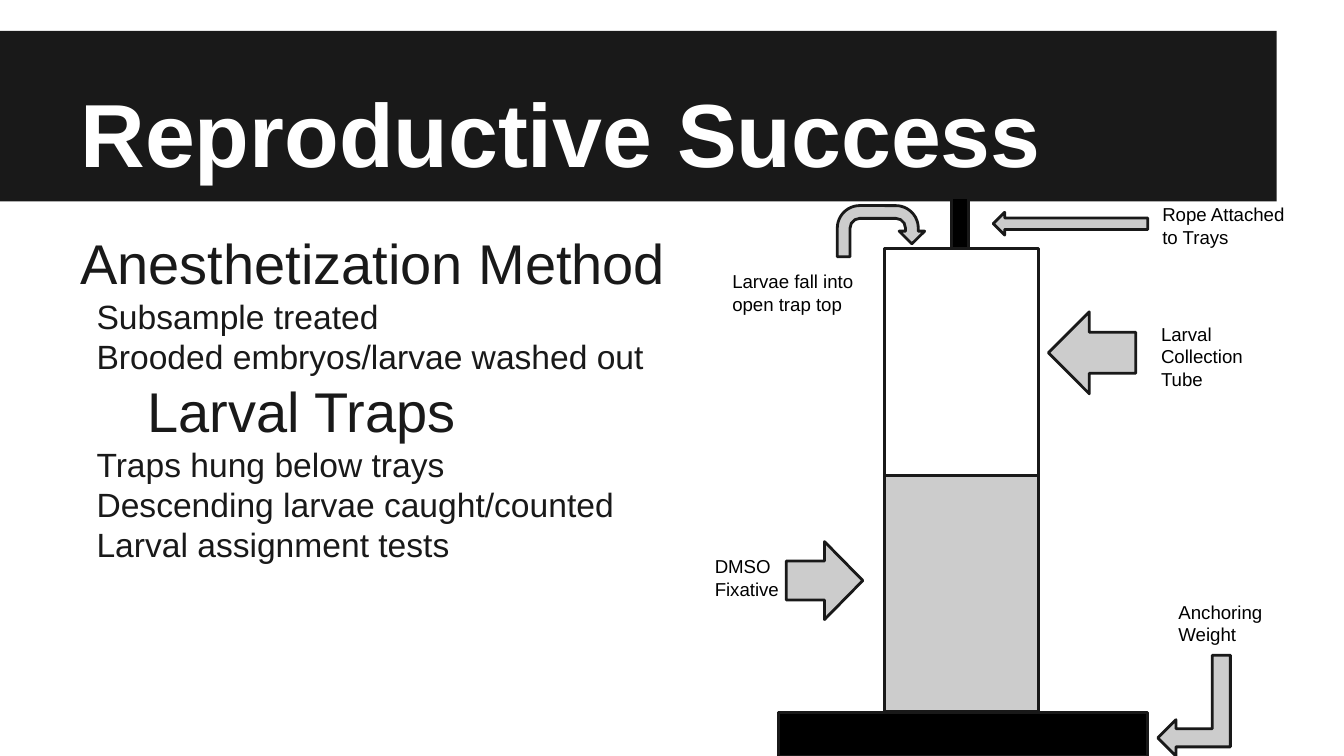
from pptx import Presentation
from pptx.dml.color import RGBColor
from pptx.enum.shapes import MSO_SHAPE
from pptx.enum.text import MSO_ANCHOR
from pptx.util import Inches, Pt

RECT = MSO_SHAPE.RECTANGLE
UTURN = MSO_SHAPE.U_TURN_ARROW
LEFT = MSO_SHAPE.LEFT_ARROW
RIGHT = MSO_SHAPE.RIGHT_ARROW
BENT = MSO_SHAPE.BENT_UP_ARROW
BOTTOM = MSO_ANCHOR.BOTTOM
DARK, GRAY, WHITE, BLACK = "191919", "CCCCCC", "FFFFFF", "000000"

deck = Presentation()
deck.slide_width, deck.slide_height = Inches(10), Inches(10 * 9 / 16)
slide = deck.slides.add_slide(deck.slide_layouts[6])


def add_block(kind, box, fill):
    block = slide.shapes.add_shape(kind, *map(Inches, box))
    block.shadow.inherit = False
    block.fill.solid()
    block.fill.fore_color.rgb = RGBColor.from_string(fill)
    block.line.color.rgb = RGBColor.from_string(DARK)
    block.line.width = Pt(1.5)
    return block


def add_text(box, rows, color, bold=False):
    """Add a text box; each row is (text, size, left margin, first-line indent)."""
    frame = slide.shapes.add_textbox(*map(Inches, box)).text_frame
    frame.word_wrap = True
    frame.margin_left = frame.margin_right = Inches(0.1)
    frame.margin_top = frame.margin_bottom = Inches(0.1)
    for i, (text, size, margin, indent) in enumerate(rows):
        para = frame.add_paragraph() if i else frame.paragraphs[0]
        para.text = text
        props = para._p.get_or_add_pPr()
        props.set("marL", str(Inches(margin)))
        props.set("indent", str(Inches(indent)))
        font = para.font
        font.name, font.size, font.bold = "Arial", Pt(size), bold
        font.color.rgb = RGBColor.from_string(color)
    return frame


# Title band
band = add_block(RECT, (0, 0.23, 9.5, 1.27), DARK)
band.line.fill.background()
title = add_text((0.5, 0.23, 9, 1.25), [("Reproductive Success", 48, 0, 0)], WHITE, True)
title.vertical_anchor = BOTTOM

# Methods
item = (18, 0.5, -0.38)
add_text((0.5, 1.6, 4.59, 3.79), [
    ("Anesthetization Method", 30, 0, 0),
    ("Subsample treated", *item),
    ("Brooded embryos/larvae washed out", *item),
    ("Larval Traps", 30, 0.5, 0),
    ("Traps hung below trays", *item),
    ("Descending larvae caught/counted", *item),
    ("Larval assignment tests", *item),
], DARK)

# Trap: fixative, tube, rope, weight
for box, fill in [
    ((6.58, 3.54, 1.15, 1.75), GRAY),
    ((6.58, 1.85, 1.15, 1.69), WHITE),
    ((7.08, 1.47, 0.13, 0.38), BLACK),
    ((5.79, 5.3, 2.75, 0.33), BLACK),
]:
    add_block(RECT, box, fill)

# Arrows
uturn = add_block(UTURN, (6.23, 1.53, 0.65, 0.38), GRAY)
for i, value in enumerate((0.25, 0.25, 0.25, 0.44, 0.75)):
    uturn.adjustments[i] = value
add_block(LEFT, (7.39, 1.58, 1.15, 0.17), GRAY)
add_block(LEFT, (7.8, 2.32, 0.65, 0.61), GRAY)
add_block(RIGHT, (5.85, 4.03, 0.57, 0.58), GRAY)
bent = add_block(BENT, (8.51, 4.98, 0.75, 0.54), GRAY)
bent.rotation = 270
bent._element.spPr.xfrm.set("flipH", "1")

# Labels
for box, lines in [
    ((5.35, 1.91, 1.15, 0.51), ["Larvae fall into open trap top"]),
    ((8.55, 1.41, 1.12, 0.51), ["Rope Attached to Trays"]),
    ((8.54, 2.3, 0.88, 0.65), ["Larval Collection Tube"]),
    ((5.22, 4.03, 0.84, 0.58), ["DMSO", "Fixative"]),
    ((8.67, 4.37, 0.88, 0.51), ["Anchoring Weight"]),
]:
    add_text(box, [(line, 10, 0, 0) for line in lines], BLACK)

deck.save("out.pptx")
